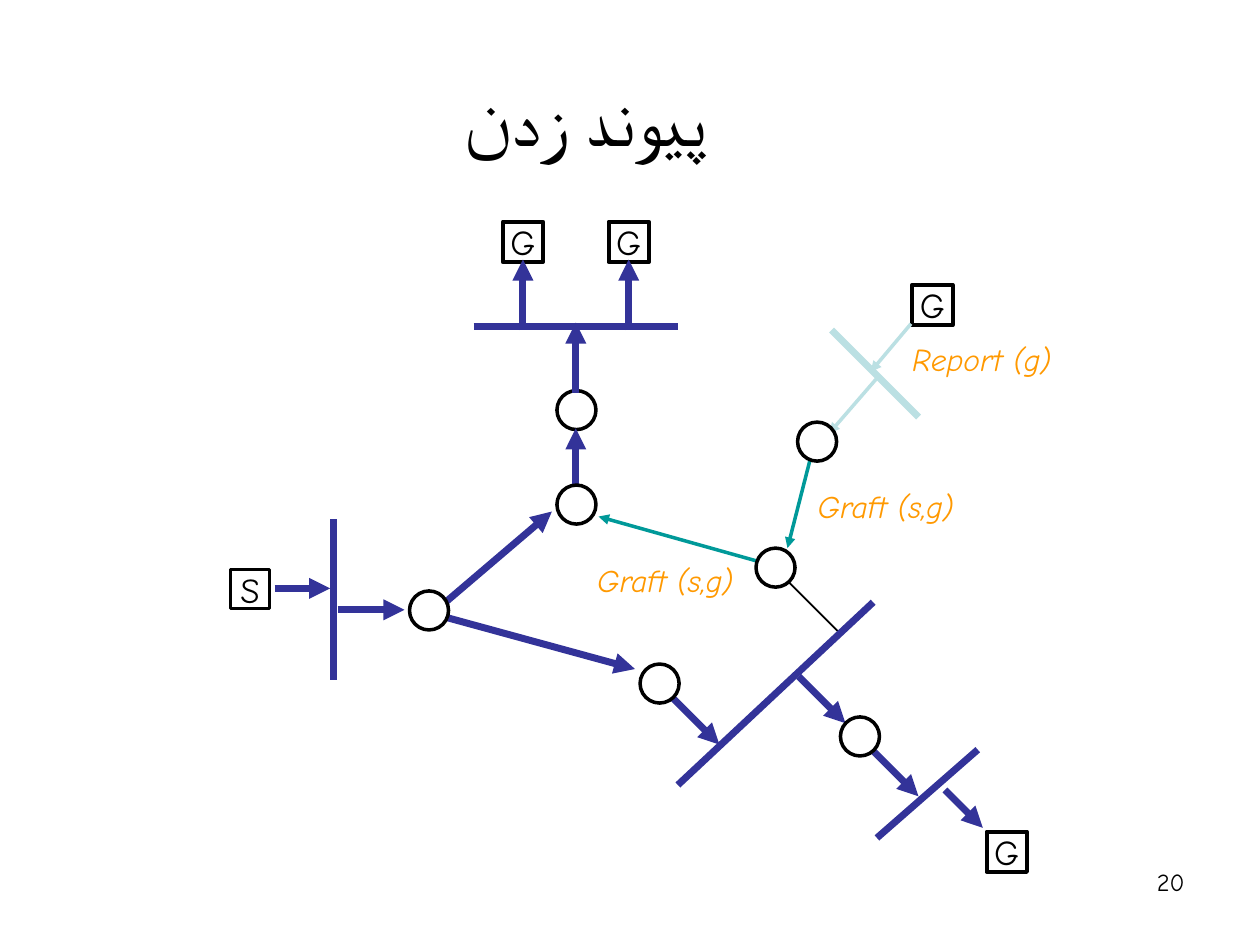
from dataclasses import dataclass

from pptx import Presentation
from pptx.dml.color import RGBColor
from pptx.enum.shapes import MSO_CONNECTOR, MSO_SHAPE
from pptx.enum.text import MSO_ANCHOR, MSO_AUTO_SIZE, PP_ALIGN
from pptx.oxml.ns import qn
from pptx.util import Inches, Pt
from lxml import etree

LINE = MSO_CONNECTOR.STRAIGHT
RECT, OVAL = MSO_SHAPE.RECTANGLE, MSO_SHAPE.OVAL
MID, TOP = MSO_ANCHOR.MIDDLE, MSO_ANCHOR.TOP
LEFT, CENTER, RIGHT = PP_ALIGN.LEFT, PP_ALIGN.CENTER, PP_ALIGN.RIGHT
GROW = MSO_AUTO_SIZE.SHAPE_TO_FIT_TEXT

FONT = "Comic Neue"
HEX = {
    "ink": "000000",
    "paper": "FFFFFF",
    "tree": "333399",
    "graft": "009999",
    "report": "BBE0E3",
    "note": "FF9900",
}


@dataclass
class Link:
    x1: float
    y1: float
    x2: float
    y2: float
    tip: bool = True
    color: str = "tree"
    width: float = 4


@dataclass
class Host:
    x: float
    y: float
    name: str = "G"
    size: float = 0.32
    edge: float = 2.25
    fill: str = ""


@dataclass
class Router:
    x: float
    y: float
    size: float = 0.31


@dataclass
class Note:
    x: float
    y: float
    width: float
    text: str


# Group members and the source
MEMBERS = [Host(3.99, 1.76), Host(4.83, 1.76), Host(7.24, 2.26), Host(7.83, 6.6)]
SOURCE = Host(1.83, 4.52, "S", 0.31, 2, "paper")

# The upper router lies under its arrows, the others over theirs
UPPER = Router(4.42, 3.1)
ROUTERS = [
    Router(4.42, 3.85), Router(3.25, 4.69), Router(6, 4.35),
    Router(6.33, 3.35), Router(5.08, 5.27), Router(6.67, 5.69),
]

LINKS = [
    # Graft and report messages
    Link(6.14, 4.49, 4.75, 4.1, color="graft", width=2),
    Link(6.47, 3.49, 6.25, 4.35, color="graft", width=2),
    Link(6.97, 2.99, 6.58, 3.44, color="report", width=2),
    Link(7.23, 2.57, 6.91, 2.95, color="report", width=2),
    Link(6.15, 4.51, 6.65, 5.01, False, "ink", 1),
    # Lower branch
    Link(5.25, 5.45, 5.71, 5.91),
    Link(6.34, 5.37, 6.71, 5.74),
    Link(6.84, 5.87, 7.29, 6.32),
    Link(7.5, 6.27, 7.8, 6.57),
    # Upper branch
    Link(4.57, 3.12, 4.57, 2.56),
    Link(4.57, 3.87, 4.57, 3.4),
    Link(4.15, 2.62, 4.15, 2.06),
    Link(4.99, 2.62, 4.99, 2.06),
    # From the source
    Link(3.43, 4.87, 4.38, 4.06),
    Link(3.43, 4.87, 5.04, 5.31),
    Link(2.68, 4.84, 3.21, 4.84),
    Link(2.18, 4.67, 2.62, 4.67),
    # Local networks
    Link(3.76, 2.59, 5.38, 2.59, False),
    Link(2.65, 4.12, 2.65, 5.4, False),
    Link(6.6, 2.62, 7.29, 3.31, False, "report"),
    Link(6.93, 4.78, 5.38, 6.23, False),
    Link(7.76, 5.95, 6.96, 6.65, False),
]

NOTES = [
    Note(6.39, 3.82, 1.44, "Graft (s,g)"),
    Note(4.64, 4.4, 1.44, "Graft (s,g)"),
    Note(7.14, 2.65, 1.39, "Report (g)"),
]


def shade(name: str) -> RGBColor:
    return RGBColor.from_string(HEX[name])


def write(shape, text: str, size: float, color: str = "ink", align=LEFT,
          italic: bool = False, **frame) -> None:
    body = shape.text_frame
    for key, value in frame.items():
        setattr(body, key, value)
    line = body.paragraphs[0]
    line.alignment = align
    run = line.add_run()
    run.text = text
    style = {"name": FONT, "size": Pt(size), "bold": False, "italic": italic}
    for key, value in style.items():
        setattr(run.font, key, value)
    run.font.color.rgb = shade(color)


def draw_link(slide, link: Link) -> None:
    ends = [Inches(v) for v in (link.x1, link.y1, link.x2, link.y2)]
    wire = slide.shapes.add_connector(LINE, *ends)
    wire.line.color.rgb = shade(link.color)
    wire.line.width = Pt(link.width)
    props = wire.line._get_or_add_ln()
    if link.tip:
        etree.SubElement(props, qn("a:tailEnd"), type="triangle")
    etree.SubElement(props.getparent(), qn("a:effectLst"))


def draw_node(slide, kind, x: float, y: float, size: float,
              edge: float, fill: str):
    node = slide.shapes.add_shape(
        kind, Inches(x), Inches(y), Inches(size), Inches(size))
    node.shadow.inherit = False
    if fill:
        node.fill.solid()
        node.fill.fore_color.rgb = shade(fill)
    else:
        node.fill.background()
    node.line.color.rgb = shade("ink")
    node.line.width = Pt(edge)
    return node


def draw_host(slide, host: Host) -> None:
    node = draw_node(slide, RECT, host.x, host.y, host.size, host.edge, host.fill)
    write(node, host.name, 20, align=CENTER, word_wrap=False, vertical_anchor=MID)


def draw_router(slide, router: Router) -> None:
    draw_node(slide, OVAL, router.x, router.y, router.size, 2, "paper")


def add_box(slide, x: float, y: float, width: float, height: float):
    return slide.shapes.add_textbox(
        Inches(x), Inches(y), Inches(width), Inches(height))


def draw_note(slide, note: Note) -> None:
    box = add_box(slide, note.x, note.y, note.width, 0.4)
    write(box, note.text, 18, "note", italic=True, word_wrap=False, auto_size=GROW)


def main() -> None:
    deck = Presentation()
    deck.slide_width, deck.slide_height = Inches(10), Inches(7.5)
    slide = deck.slides.add_slide(deck.slide_layouts[5])

    # Title, set right to left
    title = slide.shapes.title
    place = {"left": 0.5, "top": 0.46, "width": 8.29, "height": 0.92}
    for key, value in place.items():
        setattr(title, key, Inches(value))
    write(title, "پیوند زدن", 44, align=CENTER, vertical_anchor=MID)
    title.text_frame.paragraphs[0]._p.get_or_add_pPr().set("rtl", "1")

    # Network, from back to front
    for host in MEMBERS:
        draw_host(slide, host)
    draw_router(slide, UPPER)
    for link in LINKS:
        draw_link(slide, link)
    draw_host(slide, SOURCE)
    for router in ROUTERS:
        draw_router(slide, router)
    for note in NOTES:
        draw_note(slide, note)

    # Page number
    page = add_box(slide, 7.17, 6.83, 2.33, 0.52)
    write(page, "20", 14, align=RIGHT, word_wrap=True, vertical_anchor=TOP)

    deck.save("out.pptx")


if __name__ == "__main__":
    main()
